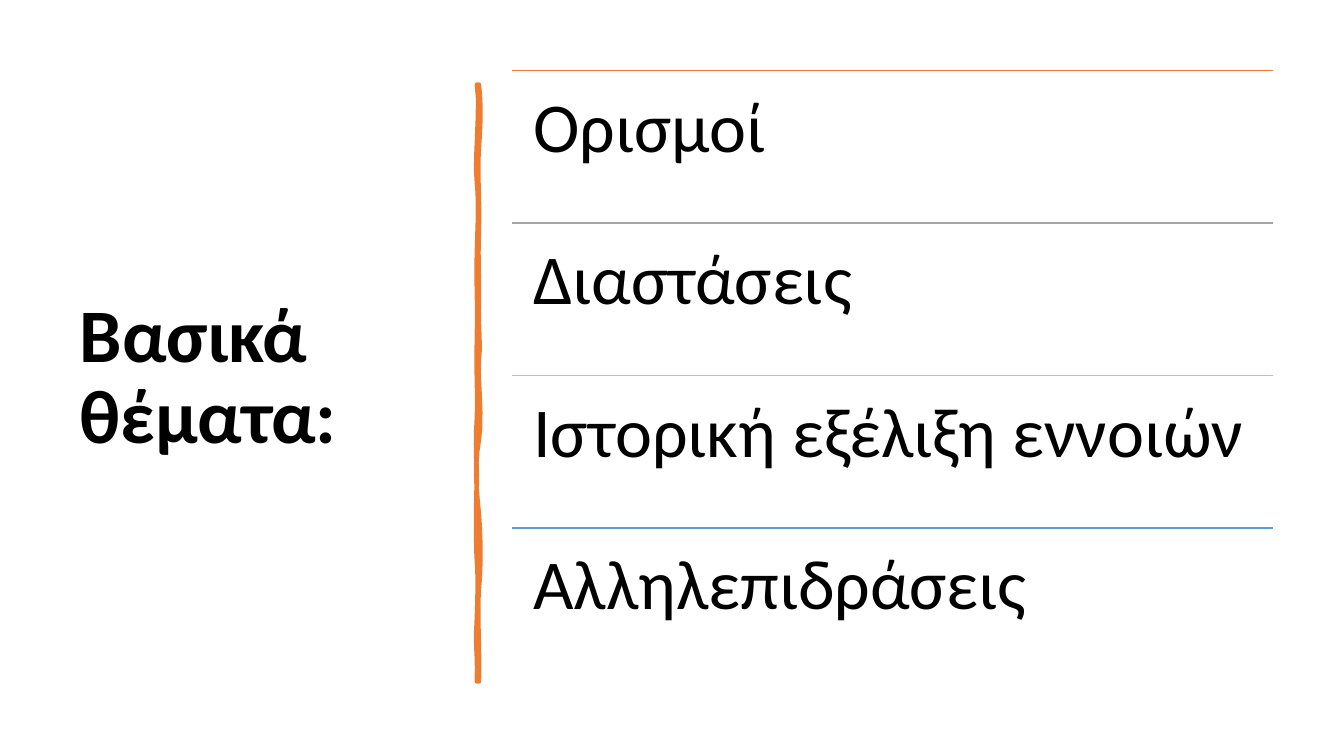
import pptx
import pptx.dml.color
import pptx.enum.shapes
import pptx.enum.text
import pptx.oxml.ns
import pptx.util
from lxml import etree

BLACK, ORANGE, GREY, GOLD, BLUE = "000000", "ED7D31", "A5A5A5", "FFC000", "5B9BD5"
TOPICS = [
    ("Ορισμοί", ORANGE),
    ("Διαστάσεις", GREY),
    ("Ιστορική εξέλιξη εννοιών", GOLD),
    ("Αλληλεπιδράσεις", BLUE),
]
LIST_LEFT, LIST_TOP, LIST_WIDTH, ROW_HEIGHT = 38.1, 9.33, 56.6, 20.17

# Brush outline in inches: a start, then two control points and an end per curve.
BRUSH_START = (4.75, 0.84)
BRUSH_CURVES = [
    ((4.77, 1.02), (4.77, 1.19), (4.75, 1.46)),
    ((4.73, 1.73), (4.76, 1.95), (4.75, 2.26)),
    ((4.74, 2.57), (4.75, 2.62), (4.75, 2.94)),
    ((4.74, 3.25), (4.77, 3.42), (4.75, 3.56)),
    ((4.73, 3.7), (4.79, 4.14), (4.75, 4.36)),
    ((4.71, 4.57), (4.72, 4.84), (4.75, 5.1)),
    ((4.77, 5.36), (4.77, 5.64), (4.75, 5.84)),
    ((4.73, 6.03), (4.76, 6.5), (4.75, 6.76)),
    ((4.74, 6.76), (4.73, 6.76), (4.73, 6.76)),
    ((4.74, 6.46), (4.71, 6.44), (4.73, 6.13)),
    ((4.74, 5.83), (4.74, 5.7), (4.73, 5.57)),
    ((4.72, 5.44), (4.72, 4.95), (4.73, 4.77)),
    ((4.73, 4.59), (4.71, 4.45), (4.73, 4.15)),
    ((4.74, 3.86), (4.72, 3.73), (4.73, 3.35)),
    ((4.74, 2.98), (4.72, 2.81), (4.73, 2.5)),
    ((4.74, 2.18), (4.75, 2), (4.73, 1.81)),
    ((4.7, 1.63), (4.77, 1.04), (4.73, 0.84)),
]


def color(value):
    return pptx.dml.color.RGBColor.from_string(value)


def bezier(points, t):
    """Return the point at share t of a cubic curve."""
    u = 1 - t
    weights = (u ** 3, 3 * u * u * t, 3 * u * t * t, t ** 3)
    return tuple(pptx.util.Inches(sum(w * p[axis] for w, p in zip(weights, points)))
                 for axis in (0, 1))


class SlideBuilder:
    """Draw on a slide divided into 100 columns and 100 rows."""

    font = "Calibri"

    def __init__(self, prs):
        self.width, self.height = prs.slide_width, prs.slide_height
        self.s = prs.slides.add_slide(prs.slide_layouts[5])

    def x(self, columns):
        return int(self.width * columns / 100)

    def y(self, rows):
        return int(self.height * rows / 100)

    def add_text(self, tf, text, size, anchor, bold=False):
        tf.word_wrap = True
        tf.auto_size = pptx.enum.text.MSO_AUTO_SIZE.NONE
        tf.vertical_anchor = anchor
        p = tf.paragraphs[0]
        p.alignment = pptx.enum.text.PP_ALIGN.LEFT
        p.line_spacing = 0.9
        r = p.add_run()
        r.text = text
        r.font.name, r.font.size, r.font.bold = self.font, pptx.util.Pt(size), bold
        r.font.color.rgb = color(BLACK)

    def title(self, text, left, top, width, height):
        sp = self.s.shapes.title
        sp.left, sp.top = self.x(left), self.y(top)
        sp.width, sp.height = self.x(width), self.y(height)
        self.add_text(sp.text_frame, text, 54, pptx.enum.text.MSO_ANCHOR.MIDDLE, bold=True)

    def text(self, text, left, top, width, height):
        sp = self.s.shapes.add_textbox(self.x(left), self.y(top), self.x(width), self.y(height))
        tf = sp.text_frame
        inset = pptx.util.Inches(0.21)
        tf.margin_left = tf.margin_right = tf.margin_top = tf.margin_bottom = inset
        self.add_text(tf, text, 50, pptx.enum.text.MSO_ANCHOR.TOP)

    def rule(self, left, top, width, line_color):
        line = self.s.shapes.add_connector(
            pptx.enum.shapes.MSO_CONNECTOR.STRAIGHT,
            self.x(left), self.y(top), self.x(left + width), self.y(top))
        line.line.color.rgb = color(line_color)
        line.line.width = pptx.util.Pt(1)
        etree.SubElement(line.element.spPr, pptx.oxml.ns.qn("a:effectLst"))

    def brush(self, start, curves, fill_color, steps=6):
        """Draw a closed outline of cubic curves as one filled stroke."""
        builder = self.s.shapes.build_freeform(*bezier([start] * 4, 0))
        for curve in curves:
            points = [start, *curve]
            builder.add_line_segments(
                [bezier(points, i / steps) for i in range(1, steps + 1)], close=False)
            start = curve[-1]
        builder.add_line_segments([], close=True)
        sp = builder.convert_to_shape()
        sp.shadow.inherit = False
        sp.fill.solid()
        sp.fill.fore_color.rgb = color(fill_color)
        sp.line.color.rgb = color(fill_color)
        sp.line.width = pptx.util.Pt(3.25)


def main():
    prs = pptx.Presentation()
    prs.slide_width, prs.slide_height = pptx.util.Inches(13.33), pptx.util.Inches(7.5)
    slide = SlideBuilder(prs)
    slide.title("Βασικά θέματα:", 5.18, LIST_TOP, 28.05, 81.47)
    slide.brush(BRUSH_START, BRUSH_CURVES, ORANGE)
    for i, (topic, line_color) in enumerate(TOPICS):
        top = LIST_TOP + i * ROW_HEIGHT
        slide.rule(LIST_LEFT, top, LIST_WIDTH, line_color)
        slide.text(topic, LIST_LEFT, top, LIST_WIDTH, ROW_HEIGHT)
    prs.save("out.pptx")


if __name__ == "__main__":
    main()
